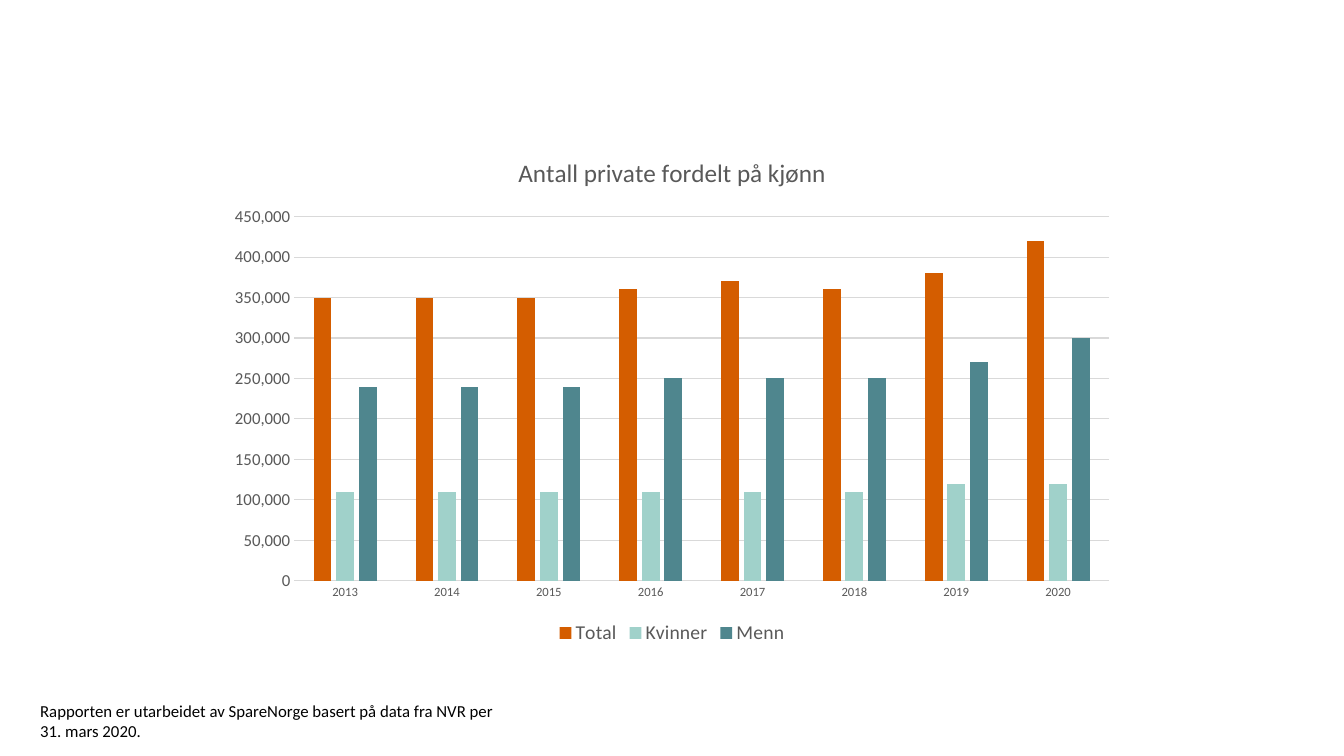
"""Build a slide with a column chart of private shareholders by gender."""
import pptx
import pptx.chart.data
import pptx.dml.color
import pptx.enum.chart
import pptx.enum.text
import pptx.util
from pptx.util import Inches

TITLE = "Antall private fordelt på kjønn"
SOURCE = "Rapporten er utarbeidet av SpareNorge basert på data fra NVR per 31. mars 2020."
YEARS = [str(year) for year in range(2013, 2021)]
SHAREHOLDERS = {
    "Total": [350000, 350000, 350000, 360000, 370000, 360000, 380000, 420000],
    "Kvinner": [110000, 110000, 110000, 110000, 110000, 110000, 120000, 120000],
    "Menn": [240000, 240000, 240000, 250000, 250000, 250000, 270000, 300000],
}
COLORS = {
    "Total": "D45D00",
    "Kvinner": "A0D1CA",
    "Menn": "4F868E",
    "label": "595959",
    "line": "D9D9D9",
    "text": "000000",
}
FONT = "Calibri"


def rgb(name):
    return pptx.dml.color.RGBColor.from_string(COLORS[name])


def style_font(font, size, color="label"):
    font.name = FONT
    font.size = pptx.util.Pt(size)
    font.bold = False
    font.color.rgb = rgb(color)


def style_line(line):
    line.color.rgb = rgb("line")
    line.width = pptx.util.Pt(0.75)


def add_gender_chart(s):
    data = pptx.chart.data.CategoryChartData(number_format="#,##0")
    data.categories = YEARS
    for name, values in SHAREHOLDERS.items():
        data.add_series(name, values)
    chart = s.shapes.add_chart(
        pptx.enum.chart.XL_CHART_TYPE.COLUMN_CLUSTERED,
        Inches(2.15), Inches(1.34), Inches(9.03), Inches(5.1), data).chart
    style_font(chart.font, 10, "text")

    chart.has_title = True
    p = chart.chart_title.text_frame.paragraphs[0]
    p.text = TITLE
    style_font(p.font, 18)
    chart.chart_title.include_in_layout = False

    chart.has_legend = True
    chart.legend.position = pptx.enum.chart.XL_LEGEND_POSITION.BOTTOM
    chart.legend.include_in_layout = False
    style_font(chart.legend.font, 14)

    for axis, size in ((chart.category_axis, 9), (chart.value_axis, 12)):
        axis.major_tick_mark = pptx.enum.chart.XL_TICK_MARK.NONE
        axis.minor_tick_mark = pptx.enum.chart.XL_TICK_MARK.NONE
        style_font(axis.tick_labels.font, size)
    style_line(chart.category_axis.format.line)
    axis = chart.value_axis
    axis.minimum_scale, axis.maximum_scale, axis.major_unit = 0, 450000, 50000
    axis.tick_labels.number_format = "#,##0"
    axis.tick_labels.number_format_is_linked = False
    axis.format.line.fill.background()
    style_line(axis.major_gridlines.format.line)

    plot = chart.plots[0]
    plot.gap_width = 219
    plot.overlap = -27
    plot.vary_by_categories = False
    for series in plot.series:
        series.format.fill.solid()
        series.format.fill.fore_color.rgb = rgb(series.name)


def add_source_note(s):
    tf = s.shapes.add_textbox(Inches(0.3), Inches(6.9), Inches(4.87), Inches(0.5)).text_frame
    tf.word_wrap = True
    tf.auto_size = pptx.enum.text.MSO_AUTO_SIZE.SHAPE_TO_FIT_TEXT
    p = tf.paragraphs[0]
    p.text = SOURCE
    style_font(p.font, 12, "text")


def main():
    prs = pptx.Presentation()
    prs.slide_width, prs.slide_height = Inches(13.33), Inches(7.5)
    s = prs.slides.add_slide(prs.slide_layouts.get_by_name("Blank"))
    add_gender_chart(s)
    add_source_note(s)
    prs.save("out.pptx")


if __name__ == "__main__":
    main()
